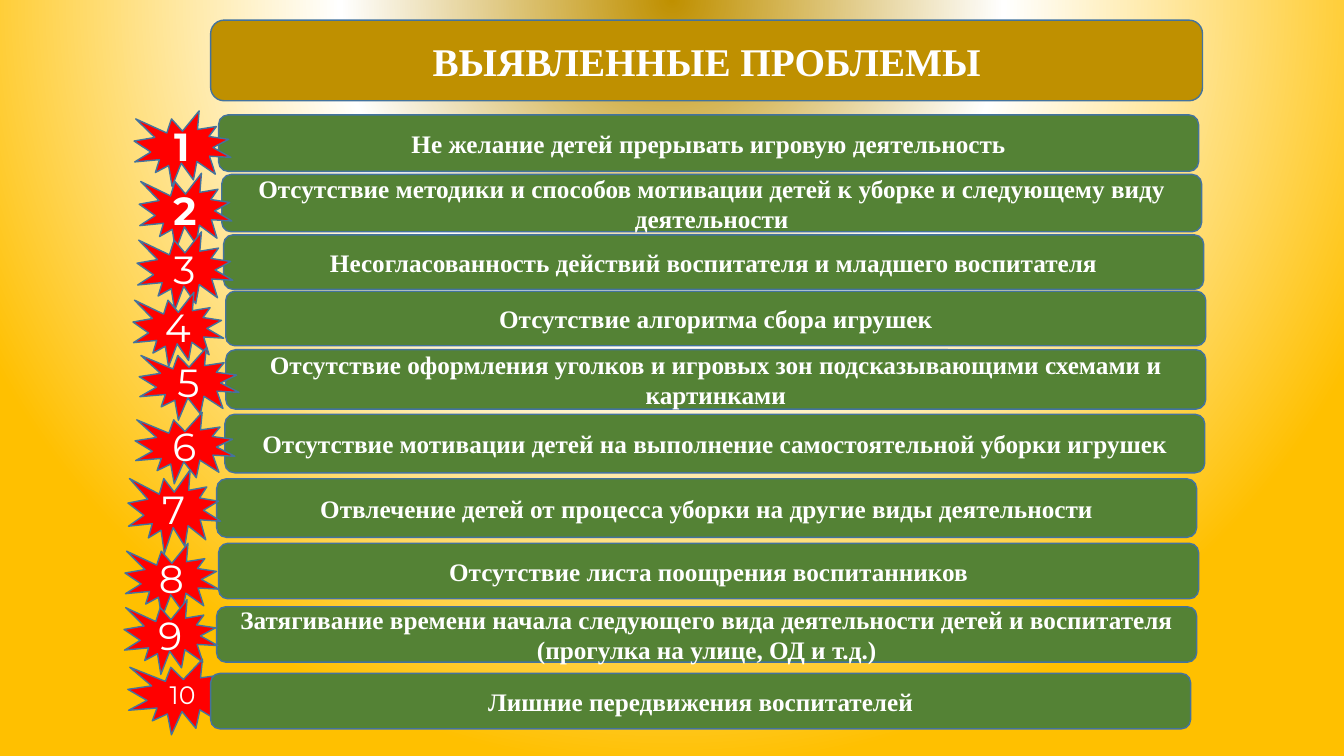
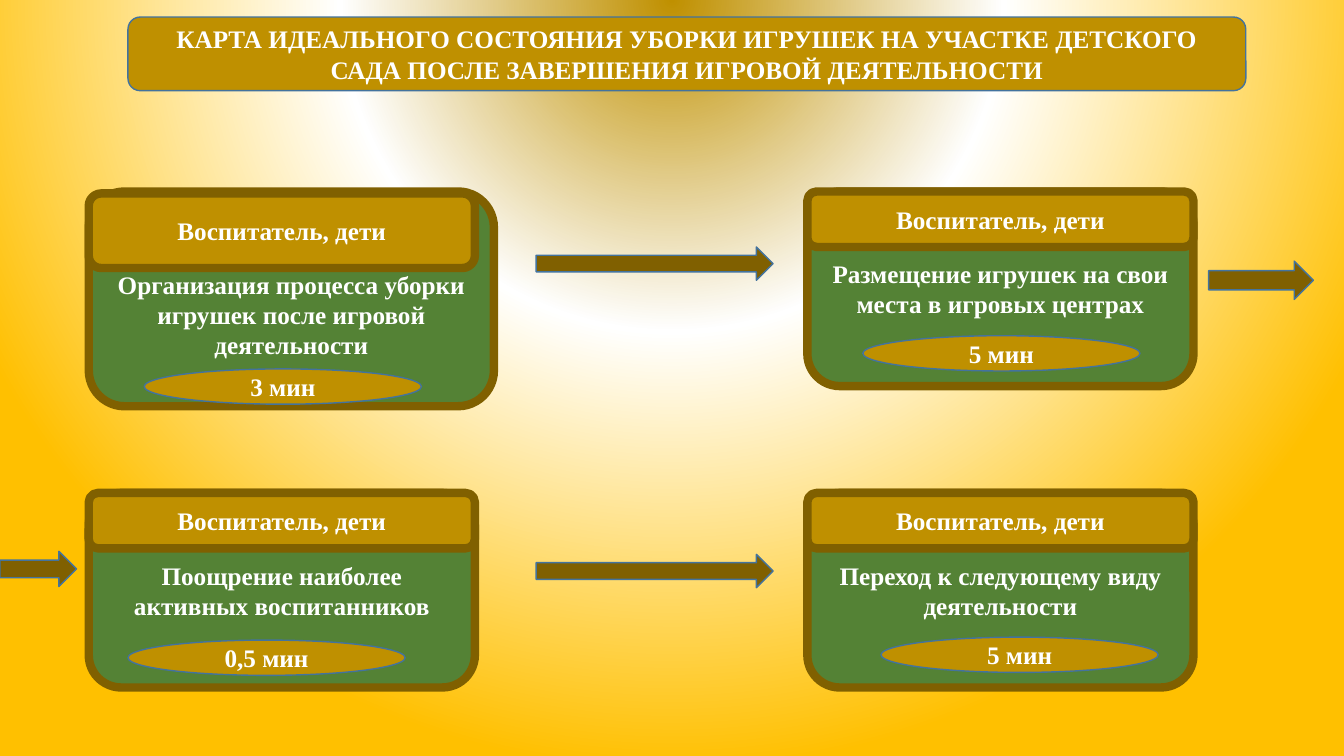
from dataclasses import dataclass
from typing import NamedTuple

from lxml import etree
from pptx import Presentation
from pptx.dml.color import RGBColor
from pptx.enum import shapes, text
from pptx.oxml import ns
from pptx.util import Pt

KIND = shapes.MSO_SHAPE


@dataclass(frozen=True)
class Theme:
    gold: str = "BF9000"
    dark_gold: str = "806000"
    green: str = "548235"
    red: str = "FF0000"
    white: str = "FFFFFF"
    outline: str = "43739E"
    glow: tuple = ((0, "BF9000"), (43, "FFFFFF"), (100, "FFC000"))
    body_font: str = "Times New Roman"
    number_font: str = "Montserrat"
    large: int = 28
    normal: int = 18
    thin: int = 1
    thick: int = 6


class Box(NamedTuple):
    x: float
    y: float
    w: float
    h: float

    def inner(self, dx, dy, w, h):
        """Box offset from this box's top left corner."""
        return Box(self.x + dx, self.y + dy, w, h)


T = Theme()
SLIDE = Box(0, 0, 960, 540)

# Bar left, top and height; badge offset from the bar and badge size
PROBLEMS = [
    ("Не желание детей прерывать игровую деятельность",
     (156.2, 82.1, 40.3), (-60.4, -2.9, 69.1, 54)),
    ("Отсутствие методики и способов мотивации детей к уборке и следующему виду деятельности",
     (158.4, 124.6, 41), (-59, -0.8, 66.2, 55.4)),
    ("Несогласованность действий воспитателя и младшего воспитателя",
     (159.8, 167.8, 38.9), (-61.9, -2.2, 68.4, 56.2)),
    ("Отсутствие алгоритма сбора игрушек",
     (161.3, 208.1, 38.9), (-66.3, 0.7, 64.8, 53.3)),
    ("Отсутствие оформления уголков и игровых зон подсказывающими схемами и картинками",
     (161.3, 249.8, 42.5), (-61.9, -1.4, 71.3, 51.8)),
    ("Отсутствие мотивации детей на выполнение самостоятельной уборки игрушек",
     (160.6, 295.9, 41.8), (-64.1, -1.4, 71.3, 51.1)),
    ("Отвлечение детей от процесса уборки на другие виды деятельности",
     (154.8, 342, 41.8), (-63.4, -6.5, 66.2, 59.8)),
    ("Отсутствие листа поощрения воспитанников",
     (156.2, 388.1, 39.6), (-66.9, 0, 67, 53.3)),
    ("Затягивание времени начала следующего вида деятельности детей и воспитателя "
     "(прогулка на улице, ОД и т.д.)",
     (154.8, 433.4, 39.6), (-66.2, -5, 67, 53.3)),
    ("Лишние передвижения воспитателей",
     (150.5, 481, 39.6), (-59.1, -10.1, 79.2, 54)),
]
BAR_WIDTH = 700

COLUMNS = (63.4, 576.7)
ROWS = (136.8, 352.1)
CARD_W, CARD_H, HEADER_H = 275.8, 139, 39.6
ARROWS = [
    (383, 176.4, 169.2, 23.8),
    (383, 396, 169.2, 23.8),
    (863.3, 186.5, 74.9, 27.4),
    (0, 393.8, 54.7, 25.2),
]


def set_background(master):
    """Give the master a radial glow centred above the slide."""
    master.background.fill.gradient()
    grad = master.element.find(".//" + ns.qn("a:gradFill"))
    for child in list(grad):
        grad.remove(child)
    stops = etree.SubElement(grad, ns.qn("a:gsLst"))
    for pos, color in T.glow:
        stop = etree.SubElement(stops, ns.qn("a:gs"), pos=str(pos * 1000))
        etree.SubElement(stop, ns.qn("a:srgbClr"), val=color)
    path = etree.SubElement(grad, ns.qn("a:path"), path="circle")
    etree.SubElement(path, ns.qn("a:fillToRect"),
                     l="50000", t="-80000", r="50000", b="180000")


def add_shape(slide, kind, box, fill, line=T.outline, width=T.thin):
    sp = slide.shapes.add_shape(kind, *(Pt(v) for v in box))
    sp.shadow.inherit = False
    sp.fill.solid()
    sp.fill.fore_color.rgb = RGBColor.from_string(fill)
    sp.line.color.rgb = RGBColor.from_string(line)
    sp.line.width = Pt(width)
    return sp


def write(sp, words, size=T.normal, font=T.body_font, bold=True):
    tf = sp.text_frame
    tf.word_wrap = True
    tf.vertical_anchor = text.MSO_ANCHOR.MIDDLE
    p = tf.paragraphs[0]
    p.text = words
    p.alignment = text.PP_ALIGN.CENTER
    p.font.name = font
    p.font.size = Pt(size)
    p.font.bold = bold
    p.font.color.rgb = RGBColor.from_string(T.white)


def add_title(slide, box, words, size):
    write(add_shape(slide, KIND.ROUNDED_RECTANGLE, box, T.gold), words, size)


def add_bar(slide, box, words):
    write(add_shape(slide, KIND.ROUNDED_RECTANGLE, box, T.green), words)


def add_badge(slide, box, number):
    sp = add_shape(slide, KIND.EXPLOSION1, box, T.red)
    size = T.large if number < 10 else T.normal
    write(sp, str(number), size, T.number_font, bold=number <= 2)


def add_card(slide, box, header, words, time, pill, drop=0):
    """Task card; drop lowers the top text margin to clear a tall header."""
    frame = dict(line=T.dark_gold, width=T.thick)
    body = add_shape(slide, KIND.ROUNDED_RECTANGLE, box, T.green, **frame)
    write(body, words)
    body.text_frame.margin_top = Pt(3.6 + drop)
    write(add_shape(slide, KIND.ROUNDED_RECTANGLE, box.inner(*header), T.gold, **frame),
          "Воспитатель, дети")
    write(add_shape(slide, KIND.OVAL, box.inner(*pill, 198, 25.2), T.gold), time)


def build_problems(slide, box):
    add_title(slide, box.inner(150.5, 14.4, 708.5, 57.6), "ВЫЯВЛЕННЫЕ ПРОБЛЕМЫ", T.large)
    bars = [box.inner(x, y, BAR_WIDTH, h) for _, (x, y, h), _ in PROBLEMS]
    names = [words for words, _, _ in PROBLEMS]
    for bar, words in zip(bars[:-1], names):
        add_bar(slide, bar, words)
    for number, (bar, (_, _, badge)) in enumerate(zip(bars, PROBLEMS), 1):
        add_badge(slide, bar.inner(*badge), number)
    add_bar(slide, bars[-1], names[-1])  # the last bar covers its badge


def build_map(slide, box):
    left, right = COLUMNS
    top, bottom = ROWS
    header = (0, 0, CARD_W, HEADER_H)
    add_card(slide, box.inner(left, top, 289.4, 153.4), (0, 1.4, CARD_W, 53.3),
             "Организация процесса уборки игрушек после игровой деятельности",
             "3 мин", (39.6, 126.7), drop=22)
    for x, y, words, time, pill in (
        (right, top, "Размещение игрушек на свои места в игровых центрах",
         "5 мин", (39.6, 103)),
        (left, bottom, "Поощрение наиболее активных воспитанников",
         "0,5 мин", (28, 105.1)),
        (right, bottom, "Переход к следующему виду деятельности",
         "5 мин", (52.6, 103)),
    ):
        add_card(slide, box.inner(x, y, CARD_W, CARD_H), header, words, time, pill)
    add_title(slide, box.inner(91.4, 12.2, 798.5, 52.6),
              "КАРТА ИДЕАЛЬНОГО СОСТОЯНИЯ УБОРКИ ИГРУШЕК НА УЧАСТКЕ ДЕТСКОГО САДА "
              "ПОСЛЕ ЗАВЕРШЕНИЯ ИГРОВОЙ ДЕЯТЕЛЬНОСТИ", T.normal)
    for arrow in ARROWS:
        add_shape(slide, KIND.RIGHT_ARROW, box.inner(*arrow), T.dark_gold)


def main():
    prs = Presentation()
    prs.slide_width, prs.slide_height = Pt(SLIDE.w), Pt(SLIDE.h)
    set_background(prs.slide_master)
    blank = prs.slide_layouts[6]
    for build in (build_problems, build_map):
        build(prs.slides.add_slide(blank), SLIDE)
    prs.save("out.pptx")


if __name__ == "__main__":
    main()
